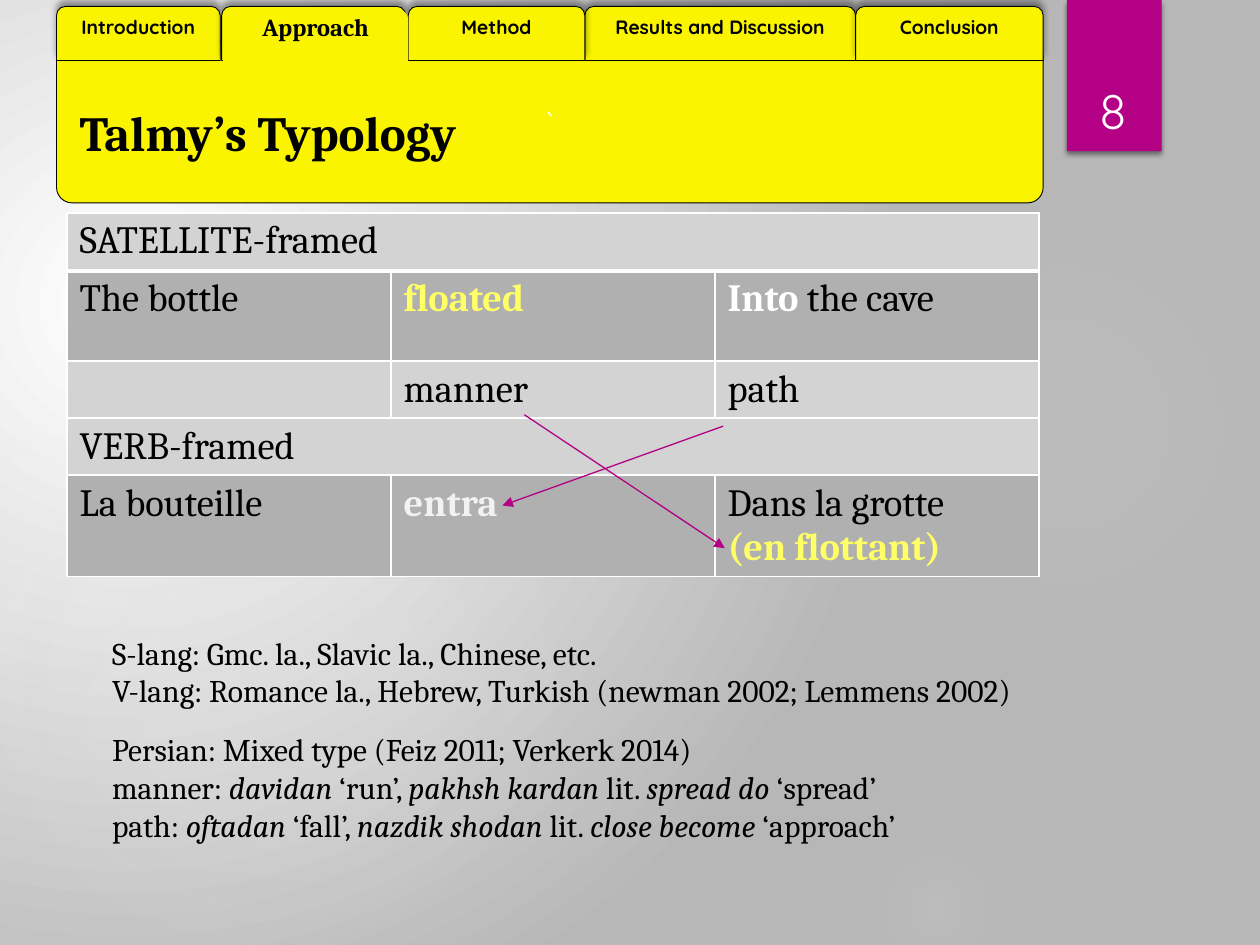
from lxml.etree import SubElement
from pptx import Presentation
from pptx.dml.color import RGBColor
from pptx.enum.shapes import MSO_CONNECTOR, MSO_SHAPE
from pptx.enum.text import MSO_ANCHOR as ANCHOR, MSO_AUTO_SIZE as AUTO, PP_ALIGN as ALIGN
from pptx.oxml import parse_xml
from pptx.oxml.ns import nsdecls, qn
from pptx.util import Cm, Pt

YELLOW, MAGENTA, BLACK, WHITE = "FAF400", "B40085", "000000", "FFFFFF"
LIGHT, DARK, LEMON = "D3D3D3", "B0B0B0", "FFFF66"
SERIF, SANS = "Cambria", "Quicksand"


def rgb(value):
    return RGBColor.from_string(value)


def write(tf, paras, size=18, font=SERIF, color=BLACK, bold=False, align=ALIGN.LEFT,
          anchor=ANCHOR.TOP, inset=None, before=None):
    """Fill tf; a paragraph is a list of (text, overrides), before maps its index to points."""
    tf.word_wrap, tf.vertical_anchor = True, anchor
    if inset is not None:
        tf.margin_left = tf.margin_right = tf.margin_top = tf.margin_bottom = Cm(inset)
    for i, runs in enumerate(paras):
        p = tf.add_paragraph() if i else tf.paragraphs[0]
        p.alignment = align
        if before and i in before:
            p.space_before = Pt(before[i])
        for text, own in ([(runs, {})] if isinstance(runs, str) else runs):
            r = p.add_run()
            r.text = text
            r.font.size, r.font.name = Pt(size), font
            r.font.bold = own.get("bold", bold)
            r.font.italic = own.get("italic", False)
            r.font.color.rgb = rgb(own.get("color", color))


def radial(old, stops, focus):
    """Replace a fill element by a circular gradient of (position, colour, opacity)."""
    gs = "".join(f'<a:gs pos="{pos * 1000}"><a:srgbClr val="{color}">'
                 f'<a:alpha val="{alpha * 1000}"/></a:srgbClr></a:gs>'
                 for pos, color, alpha in stops)
    l, t, r, b = (v * 1000 for v in focus)
    grad = parse_xml(f'<a:gradFill rotWithShape="1" {nsdecls("a")}><a:gsLst>{gs}</a:gsLst>'
                     f'<a:path path="circle"><a:fillToRect l="{l}" t="{t}" r="{r}" b="{b}"/>'
                     '</a:path></a:gradFill>')
    old.getparent().replace(old, grad)


def shape(slide, kind, box, fill=None, line=None, shadow=None):
    """Add a preset shape; shadow is (opacity, blur, distance, direction)."""
    sp = slide.shapes.add_shape(kind, *map(Cm, box))
    sp.shadow.inherit = False
    if fill:
        sp.fill.solid()
        sp.fill.fore_color.rgb = rgb(fill)
    else:
        sp.fill.background()
    if line:
        sp.line.color.rgb, sp.line.width = rgb(line), Pt(0.5)
    else:
        sp.line.fill.background()
    if shadow:
        alpha, blur, dist, angle = shadow
        sp._element.spPr.find(qn("a:effectLst")).append(parse_xml(
            f'<a:outerShdw {nsdecls("a")} blurRad="{Pt(blur)}" dist="{Pt(dist)}" '
            f'dir="{angle * 60000}" rotWithShape="0"><a:srgbClr val="{BLACK}">'
            f'<a:alpha val="{alpha * 1000}"/></a:srgbClr></a:outerShdw>'))
    return sp


def backdrop(slide):
    slide.background.fill.solid()
    solid = slide.element.find(".//" + qn("p:bgPr")).find(qn("a:solidFill"))
    radial(solid, [(0, WHITE, 100), (100, "B7B7B7", 100)], (45, 65, 125, 100))
    # left, top, diameter, inner and middle opacity, middle and outer position
    for x, y, d, inner, middle, end in [
            (17.5, 4.65, 7.82, 7, 6, 69), (15.8, -1.27, 4.45, 14, 7, 73),
            (17.5, 16.94, 2.74, 9, 5, 66), (-0.43, 7.42, 11.63, 11, 10, 75),
            (-2.34, 8.05, 6.55, 8, 8, 72)]:
        glow = shape(slide, MSO_SHAPE.OVAL, (x, y, d, d))
        radial(glow._element.spPr.find(qn("a:noFill")),
               [(0, "F3F3F3", inner), (36, "F3F3F3", middle), (end, "F3F3F3", 0)], (50,) * 4)


def page_badge(slide, x, y, w, h, number):
    shape(slide, MSO_SHAPE.RECTANGLE, (x, y, w, h), MAGENTA, shadow=(45, 3, 2, 90))
    box = slide.shapes.add_textbox(Cm(x + 0.05), Cm(y + 0.81), Cm(1.75), Cm(2.13))
    write(box.text_frame, [number], 28, SANS, WHITE, align=ALIGN.CENTER, anchor=ANCHOR.BOTTOM)


def header(slide, x, y, w, h, title):
    """Tabbed folder with the current section's tab in front."""
    panel = shape(slide, MSO_SHAPE.ROUNDED_RECTANGLE, (x, y + 0.71, w, h - 0.71), YELLOW, BLACK)
    panel.adjustments[0] = 0.096
    write(panel.text_frame, ["`"], 18, SANS, WHITE, align=ALIGN.CENTER, anchor=ANCHOR.MIDDLE)

    tab_kind = MSO_SHAPE.ROUND_2_SAME_RECTANGLE
    for dx, width, label in [(0, 3.3, "Introduction"), (3.33, 3.71, None),
                             (10.65, 5.46, "Results and Discussion"),
                             (16.11, 3.78, "Conclusion"), (7.09, 3.56, "Method")]:
        tab = shape(slide, tab_kind, (x + dx, y, width, 1.09), YELLOW, BLACK, (40, 4, 3, 270))
        if label:
            write(tab.text_frame, [label], 11, SANS, bold=True, align=ALIGN.CENTER)
    current = shape(slide, tab_kind, (x + 3.36, y + 0.05, 3.73, 1.35), YELLOW)
    write(current.text_frame, ["Approach"], 14, bold=True, align=ALIGN.CENTER, inset=0)

    ph = slide.shapes.title
    ph.left, ph.top, ph.width, ph.height = map(Cm, (x + 0.21, y + 1.09, 19.6, 2.87))
    ph.text_frame.auto_size = AUTO.NONE
    write(ph.text_frame, [title], 28, bold=True, anchor=ANCHOR.MIDDLE)
    slide.shapes._spTree.append(ph._element)


def format_cell(cell, fill, top, bottom):
    cell.fill.solid()
    cell.fill.fore_color.rgb = rgb(fill)
    props = cell._tc.get_or_add_tcPr()
    for i, (side, width) in enumerate(zip("LRTB", (1, 1, top, bottom))):
        props.insert(i, parse_xml(
            f'<a:ln{side} {nsdecls("a")} w="{Pt(width)}"><a:solidFill>'
            f'<a:srgbClr val="{WHITE}"/></a:solidFill></a:ln{side}>'))


def arrow(slide, x1, y1, x2, y2):
    cx = slide.shapes.add_connector(MSO_CONNECTOR.STRAIGHT, *map(Cm, (x1, y1, x2, y2)))
    cx.line.color.rgb, cx.line.width = rgb(MAGENTA), Pt(0.75)
    SubElement(cx.line._get_or_add_ln(), qn("a:tailEnd"), type="triangle")
    SubElement(cx._element.spPr, qn("a:effectLst"))


def typology_table(slide, x, y, w, h):
    def strong(text, color):
        return text, {"bold": True, "color": color}

    # height, fill, paragraphs of each cell; a single cell spans the row
    rows = [
        (1.17, LIGHT, [["SATELLITE-framed"]]),
        (1.82, DARK, [["The bottle"], [[strong("floated", LEMON)]],
                      [[strong("Into", WHITE), (" the cave", {})]]]),
        (1.13, LIGHT, [[], ["manner"], ["path"]]),
        (1.13, LIGHT, [["VERB-framed"]]),
        (2.01, DARK, [["La bouteille"], [[strong("entra", "F2F2F2")]],
                      ["Dans la grotte", [strong("(en flottant)", LEMON)]]]),
    ]
    table = slide.shapes.add_table(len(rows), 3, *map(Cm, (x, y, w, h))).table
    for i, (height, fill, cells) in enumerate(rows):
        table.rows[i].height = Cm(height)
        for j in range(3):
            format_cell(table.cell(i, j), fill, 3 if i == 1 else 1, 3 if i == 0 else 1)
        if len(cells) == 1:
            table.cell(i, 0).merge(table.cell(i, 2))
        for j, paras in enumerate(cells):
            if paras:
                write(table.cell(i, j).text_frame, paras, 22)
    for x1, y1, x2, y2 in [(13.23, 4.3, 8.78, 5.9), (9.22, 4.07, 13.26, 6.76)]:
        arrow(slide, x + x1, y + y1, x + x2, y + y2)


def language_notes(slide, x, y, w, h):
    def example(kind, verb, gloss, phrase, literal, meaning):
        it = {"italic": True}
        return [(f"{kind}: ", {}), (verb, it), (f" ‘{gloss}’, ", {}), (f"{phrase} ", it),
                ("lit. ", {}), (f"{literal} ", it), (f"‘{meaning}’", {})]

    tf = slide.shapes.add_textbox(*map(Cm, (x, y, w, h))).text_frame
    write(tf, ["S-lang: Gmc. la., Slavic la., Chinese, etc.",
               "V-lang: Romance la., Hebrew, Turkish (newman 2002; Lemmens 2002)",
               "Persian: Mixed type (Feiz 2011; Verkerk 2014)",
               example("manner", "davidan", "run", "pakhsh kardan", "spread do", "spread"),
               example("path", "oftadan", "fall", "nazdik shodan", "close become", "approach")],
          before={2: 12})
    tf.auto_size = AUTO.SHAPE_TO_FIT_TEXT


def main():
    prs = Presentation()
    prs.slide_width, prs.slide_height = Cm(25.4), Cm(19.05)
    slide = prs.slides.add_slide(prs.slide_layouts[5])
    backdrop(slide)
    page_badge(slide, 21.51, 0, 1.91, 3.05, "8")
    header(slide, 1.14, 0.13, 19.89, 3.96, "Talmy’s Typology")
    typology_table(slide, 1.35, 4.29, 19.6, 7.26)
    language_notes(slide, 2.01, 12.65, 18.95, 5.31)
    prs.save("out.pptx")


if __name__ == "__main__":
    main()
